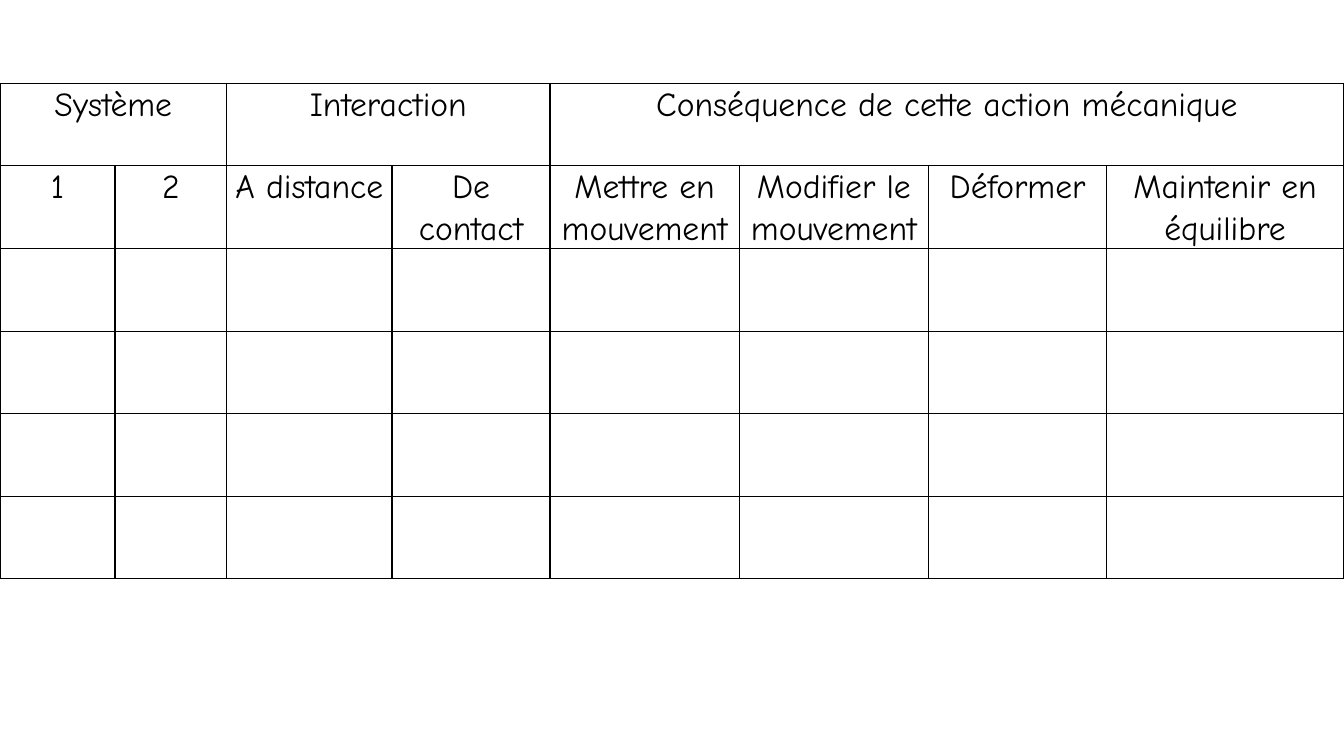
from lxml import etree
from pptx import Presentation
from pptx.dml.color import RGBColor
from pptx.enum.text import PP_ALIGN
from pptx.oxml.ns import qn
from pptx.util import Cm, Pt

CENTER = PP_ALIGN.CENTER
BLACK = "000000"
FONT = "Comic Neue"

WIDTHS = [2.9, 2.81, 4.17, 3.98, 4.77, 4.77, 4.49, 5.97]
ROWS = 6
HEIGHT = 2.08
# Top headings: first column, last column, text
GROUPS = [
    (0, 1, "Système"),
    (2, 3, "Interaction"),
    (4, 7, "Conséquence de cette action mécanique"),
]
HEADS = ["1", "2", "A distance", "De contact", "Mettre en mouvement",
         "Modifier le mouvement", "Déformer", "Maintenir en équilibre"]


def write(cell, text):
    para = cell.text_frame.paragraphs[0]
    para.text = text
    para.alignment = CENTER
    para.line_spacing = 1.07
    para.font.name = FONT
    para.font.size = Pt(24)
    para.font.color.rgb = RGBColor.from_string(BLACK)


def frame(cell, color):
    props = cell._tc.get_or_add_tcPr()
    for side in ("lnL", "lnR", "lnT", "lnB"):
        line = etree.SubElement(props, qn("a:" + side), w=str(Pt(1)))
        fill = etree.SubElement(line, qn("a:solidFill"))
        etree.SubElement(fill, qn("a:srgbClr"), val=color)


deck = Presentation()
deck.slide_width = Cm(33.87)
deck.slide_height = Cm(19.05)
slide = deck.slides.add_slide(deck.slide_layouts[6])

# Table grid
table = slide.shapes.add_table(
    ROWS, len(WIDTHS), 0, Cm(2.1), Cm(sum(WIDTHS)), Cm(ROWS * HEIGHT)).table
table.first_row = False
table.horz_banding = False
for col, width in zip(table.columns, WIDTHS):
    col.width = Cm(width)
for row in table.rows:
    row.height = Cm(HEIGHT)

# Margins, borders and no fill
for cell in table.iter_cells():
    cell.margin_left = cell.margin_right = Cm(0.18)
    cell.margin_top = cell.margin_bottom = 0
    frame(cell, BLACK)
    cell.fill.background()

# Headings
for first, last, text in GROUPS:
    table.cell(0, first).merge(table.cell(0, last))
    write(table.cell(0, first), text)
for num, text in enumerate(HEADS):
    write(table.cell(1, num), text)

deck.save("out.pptx")
